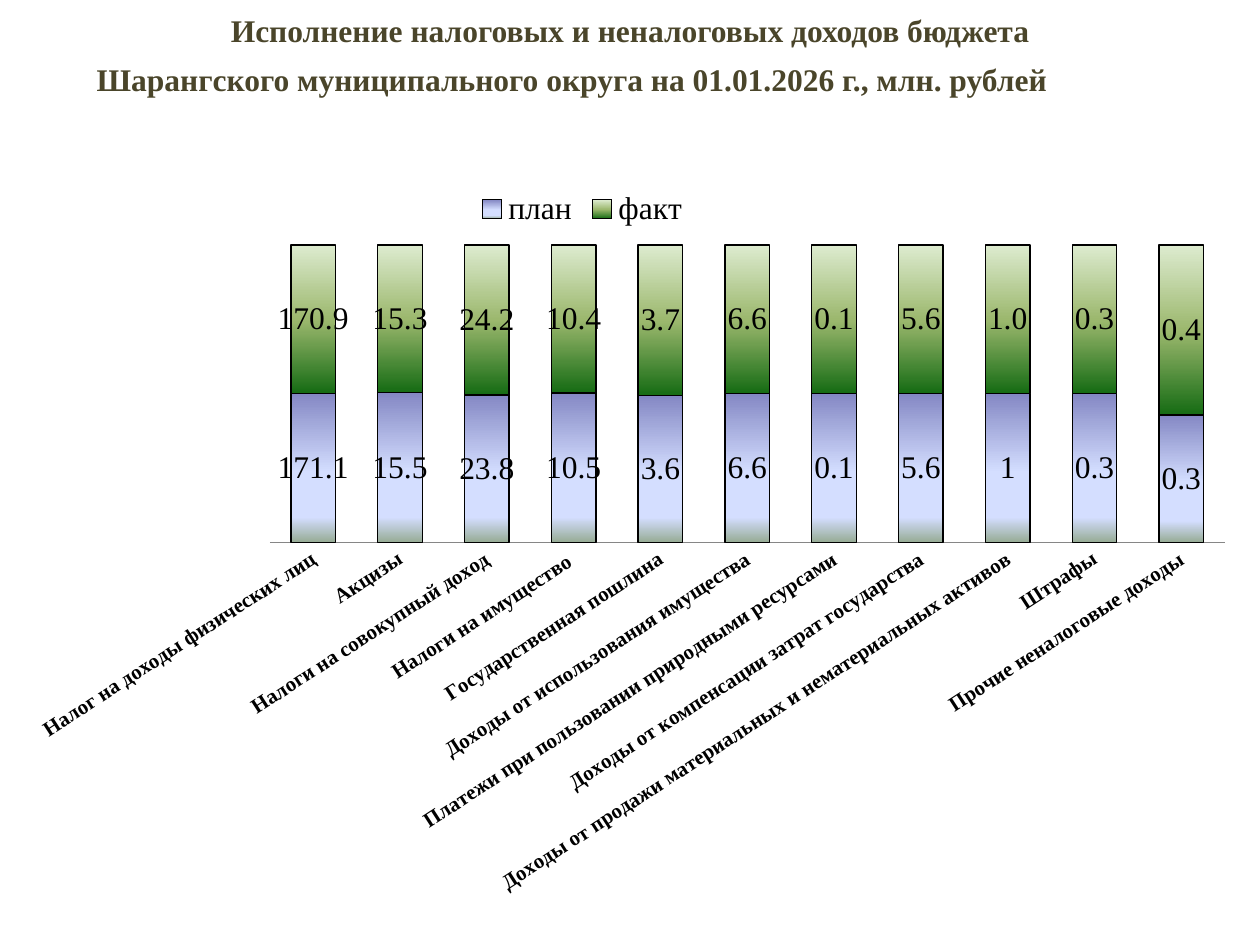
from lxml import etree
from pptx import Presentation
from pptx import util as u
from pptx.chart.data import CategoryChartData
from pptx.dml.color import RGBColor
from pptx.enum import chart as ch, text as t
from pptx.oxml import parse_xml
from pptx.oxml.ns import nsdecls, qn

FACE = "Times New Roman"
WIDE, HIGH = 24.89, 15.19
TILT = -33
CATS = [
    "Налог на доходы физических лиц",
    "Акцизы",
    "Налоги на совокупный доход",
    "Налоги на имущество ",
    "Государственная пошлина",
    "Доходы от использования имущества",
    "Платежи при пользовании природными ресурсами",
    "Доходы от компенсации затрат государства",
    "Доходы от продажи материальных и нематериальных активов",
    "Штрафы",
    "Прочие неналоговые доходы",
]
PLAN = [171.1, 15.5, 23.8, 10.5, 3.6, 6.6, 0.1, 5.6, 1, 0.3, 0.3]
FACT = [170.9, 15.3, 24.2, 10.4, 3.7, 6.6, 0.1, 5.6, 1, 0.3, 0.4]
BLUE = [(0, "8488C4"), (53, "D4DEFF"), (83, "D4DEFF"), (100, "96AB94")]
GREEN = [(0, "DDEBCF"), (50, "9CB86E"), (100, "156B13")]


def color(hexa):
    return RGBColor.from_string(hexa)


def style(font, size, hexa="000000", bold=False):
    font.name = FACE
    font.size = u.Pt(size)
    font.bold = bold
    font.color.rgb = color(hexa)


def write(frame, words, first=False, size=18, hexa="000000", bold=False,
          before=0, right=0):
    para = frame.paragraphs[0] if first else frame.add_paragraph()
    para.alignment = t.PP_ALIGN.CENTER
    para.line_spacing = 0.9
    if before:
        para.space_before = u.Pt(before)
    if right:
        para._p.get_or_add_pPr().set("marR", str(u.Cm(right)))
    run = para.add_run()
    run.text = words
    style(run.font, size, hexa, bold)


def add_title(slide):
    box = slide.shapes.add_textbox(u.Cm(1.62), u.Cm(0.31), u.Cm(22.17), u.Cm(3.61))
    frame = box.text_frame
    frame.word_wrap = True
    frame.vertical_anchor = t.MSO_ANCHOR.TOP
    frame.margin_top = frame.margin_bottom = 0
    look = dict(size=18, hexa="4A452A", bold=True)
    write(frame, "Исполнение налоговых и неналоговых доходов бюджета", first=True, **look)
    write(frame, "Шарангского муниципального округа на 01.01.2026 г., млн. рублей",
          before=8.3, right=2.35, **look)


def paint(series, stops):
    marks = "".join(
        f'<a:gs pos="{pos * 1000}"><a:srgbClr val="{hexa}"/></a:gs>' for pos, hexa in stops
    )
    grad = parse_xml(
        f'<a:gradFill {nsdecls("a")} rotWithShape="1"><a:gsLst>{marks}</a:gsLst>'
        '<a:lin ang="5400000" scaled="0"/></a:gradFill>'
    )
    series.format.line.color.rgb = color("000000")
    series.format.line.width = u.Pt(0.75)
    series._element.spPr.insert(0, grad)


def label(series, fmt):
    tags = series.data_labels
    tags.show_value = True
    tags.number_format = fmt
    tags.number_format_is_linked = False
    tags.position = ch.XL_LABEL_POSITION.CENTER
    style(tags.font, 18)


def place(part, before, inner=False, **spots):
    for old in part.findall(qn("c:layout")):
        part.remove(old)
    lay = etree.Element(qn("c:layout"))
    hand = etree.SubElement(lay, qn("c:manualLayout"))
    pairs = [("layoutTarget", "inner")] if inner else []
    pairs += [("xMode", "edge"), ("yMode", "edge")]
    pairs += [(tag, cm / (WIDE if tag in "xw" else HIGH)) for tag, cm in spots.items()]
    for tag, val in pairs:
        etree.SubElement(hand, qn(f"c:{tag}")).set("val", str(val))
    part.find(qn(before)).addprevious(lay)


def set_axes(chart):
    axis = chart.value_axis
    axis.minimum_scale, axis.maximum_scale, axis.major_unit = -1, 1, 0.1
    axis.has_major_gridlines = False
    axis.visible = False
    cat = chart.category_axis
    cat.major_tick_mark = ch.XL_TICK_MARK.NONE
    cat.format.line.color.rgb = color("868686")
    style(cat.tick_labels.font, 12, bold=True)
    body = cat._element.find(qn("c:txPr")).find(qn("a:bodyPr"))
    body.set("rot", str(TILT * 60000))
    body.set("vert", "horz")


def add_chart(slide):
    data = CategoryChartData()
    data.categories = CATS
    data.add_series("план", PLAN)
    data.add_series("факт", FACT)
    chart = slide.shapes.add_chart(
        ch.XL_CHART_TYPE.COLUMN_STACKED_100,
        u.Cm(0.3), u.Cm(3.53), u.Cm(WIDE), u.Cm(HIGH), data,
    ).chart
    style(chart.font, 18)
    chart.has_title = False
    plot = chart.plots[0]
    plot.gap_width, plot.overlap, plot.vary_by_categories = 95, 100, False
    for series, stops, fmt in zip(plot.series, (BLUE, GREEN), ("General", "0.0")):
        paint(series, stops)
        label(series, fmt)
    set_axes(chart)
    chart.has_legend = True
    key = chart.legend
    key.position = ch.XL_LEGEND_POSITION.TOP
    key.include_in_layout = False
    style(key.font, 18)
    place(key._element, "c:overlay", x=9.22, y=0.22)
    place(chart._chartSpace.chart.plotArea, "c:barChart", inner=True,
          x=5.14, y=1.41, w=19.25, h=12)


def main():
    deck = Presentation()
    deck.slide_width, deck.slide_height = u.Cm(25.4), u.Cm(19.05)
    slide = deck.slides.add_slide(deck.slide_layouts[6])
    add_title(slide)
    add_chart(slide)
    deck.save("out.pptx")


if __name__ == "__main__":
    main()
